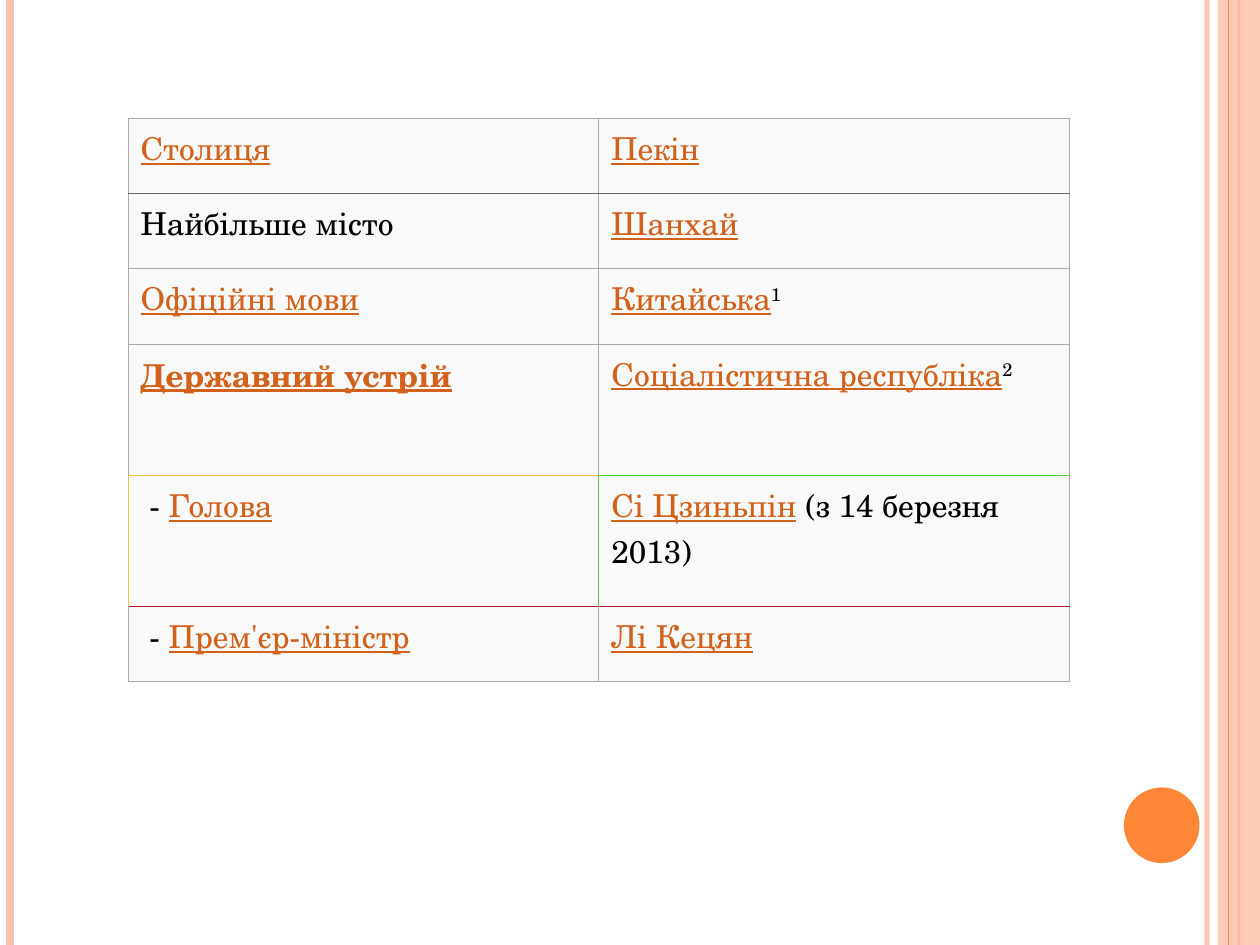
from lxml import etree
from pptx import Presentation
from pptx import util as u
from pptx.dml.color import RGBColor
from pptx.enum import shapes
from pptx.oxml.ns import qn

Pt = u.Pt
COLORS = {
    "peach": "FEC3AE", "orange": "FE8637", "link": "D2611C", "black": "000000",
    "cell": "F9F9F9", "grey": "AAAAAA", "dark": "666666", "yellow": "F0C439",
    "green": "50CF39", "red": "B01E3A",
}


def rgb(name):
    return RGBColor.from_string(COLORS[name])


def add_text(paragraph, content, color="link", underline=True, bold=False, raised=False):
    run = paragraph.add_run()
    run.text = content
    run.font.name = "TeX Gyre Schola"
    run.font.size = Pt(18)
    run.font.bold = bold
    run.font.underline = underline
    run.font.color.rgb = rgb(color)
    if raised:
        run.font._element.set("baseline", "30000")


deck = Presentation()
deck.slide_width, deck.slide_height = Pt(720), Pt(540)
slide = deck.slides.add_slide(deck.slide_layouts[6])

# Side stripes, back to front; the wide band lies under the last stripe
stripes = []
for x, color, weight in [(689.76, "peach", 3), (5.76, "peach", 4.5),
                         (707.76, "orange", 1.5), (702, "orange", 0.75)]:
    if x == 702:
        band = slide.shapes.add_shape(
            shapes.MSO_SHAPE.RECTANGLE, Pt(696), 0, Pt(24), Pt(540))
    stripe = slide.shapes.add_connector(
        shapes.MSO_CONNECTOR.STRAIGHT, Pt(x), 0, Pt(x), Pt(540))
    stripe.line.color.rgb = rgb(color)
    stripe.line.width = Pt(weight)
    etree.SubElement(stripe._element.spPr, qn("a:effectLst"))
    stripes.append(stripe)

# Corner disc
disc = slide.shapes.add_shape(shapes.MSO_SHAPE.OVAL, Pt(642.24), Pt(450), Pt(43.2), Pt(43.2))
for ornament, color in [(band, "peach"), (disc, "orange")]:
    ornament.shadow.inherit = False
    ornament.fill.solid()
    ornament.fill.fore_color.rgb = rgb(color)
    ornament.line.fill.background()

# Transparency of the band and the stripe beside it
for ornament, percent in [(band, 87), (stripes[0], 93)]:
    tint = next(ornament._element.spPr.iter(qn("a:srgbClr")))
    etree.SubElement(tint, qn("a:alpha")).set("val", str(percent * 1000))

# Country facts: each cell is a list of (text, format) runs
PLAIN = {"color": "black", "underline": False}
NOTE = {**PLAIN, "raised": True}
facts = [
    ([("Столиця", {})], [("Пекін", {})]),
    ([("Найбільше місто", PLAIN)], [("Шанхай", {})]),
    ([("Офіційні мови", {})], [("Китайська", {}), ("1", NOTE)]),
    ([("Державний устрій", {"bold": True})],
     [("Соціалістична республіка", {}), ("2", NOTE)]),
    ([(" - ", PLAIN), ("Голова", {})],
     [("Сі Цзиньпін", {}), (" (з 14 березня 2013)", PLAIN)]),
    ([(" - ", PLAIN), ("Прем'єр-міністр", {})], [("Лі Кецян", {})]),
]
heights = [43, 43, 43, 75, 75, 43]

# Border colours: horizontal lines by column, vertical lines by row
across = [("grey", "grey"), ("dark", "dark"), ("grey", "grey"), ("grey", "grey"),
          ("yellow", "green"), ("red", "red"), ("grey", "grey")]
down = [("grey", "grey", "grey")] * len(facts)
down[4] = ("yellow", "green", "grey")

table = slide.shapes.add_table(
    len(facts), 2, Pt(73.2), Pt(67.7), Pt(538), Pt(sum(heights))).table
table.first_row = table.horz_banding = False
for column in table.columns:
    column.width = Pt(269)

for r, fact in enumerate(facts):
    table.rows[r].height = Pt(heights[r])
    for c, runs in enumerate(fact):
        cell = table.cell(r, c)
        for content, style in runs:
            add_text(cell.text_frame.paragraphs[0], content, **style)
        borders = {"a:lnL": down[r][c], "a:lnR": down[r][c + 1],
                   "a:lnT": across[r][c], "a:lnB": across[r + 1][c]}
        for side, color in borders.items():
            edge = etree.SubElement(cell._tc.get_or_add_tcPr(), qn(side), w=str(Pt(0.75)))
            paint = etree.SubElement(edge, qn("a:solidFill"))
            etree.SubElement(paint, qn("a:srgbClr"), val=COLORS[color])
        cell.fill.solid()
        cell.fill.fore_color.rgb = rgb("cell")

deck.save("out.pptx")
